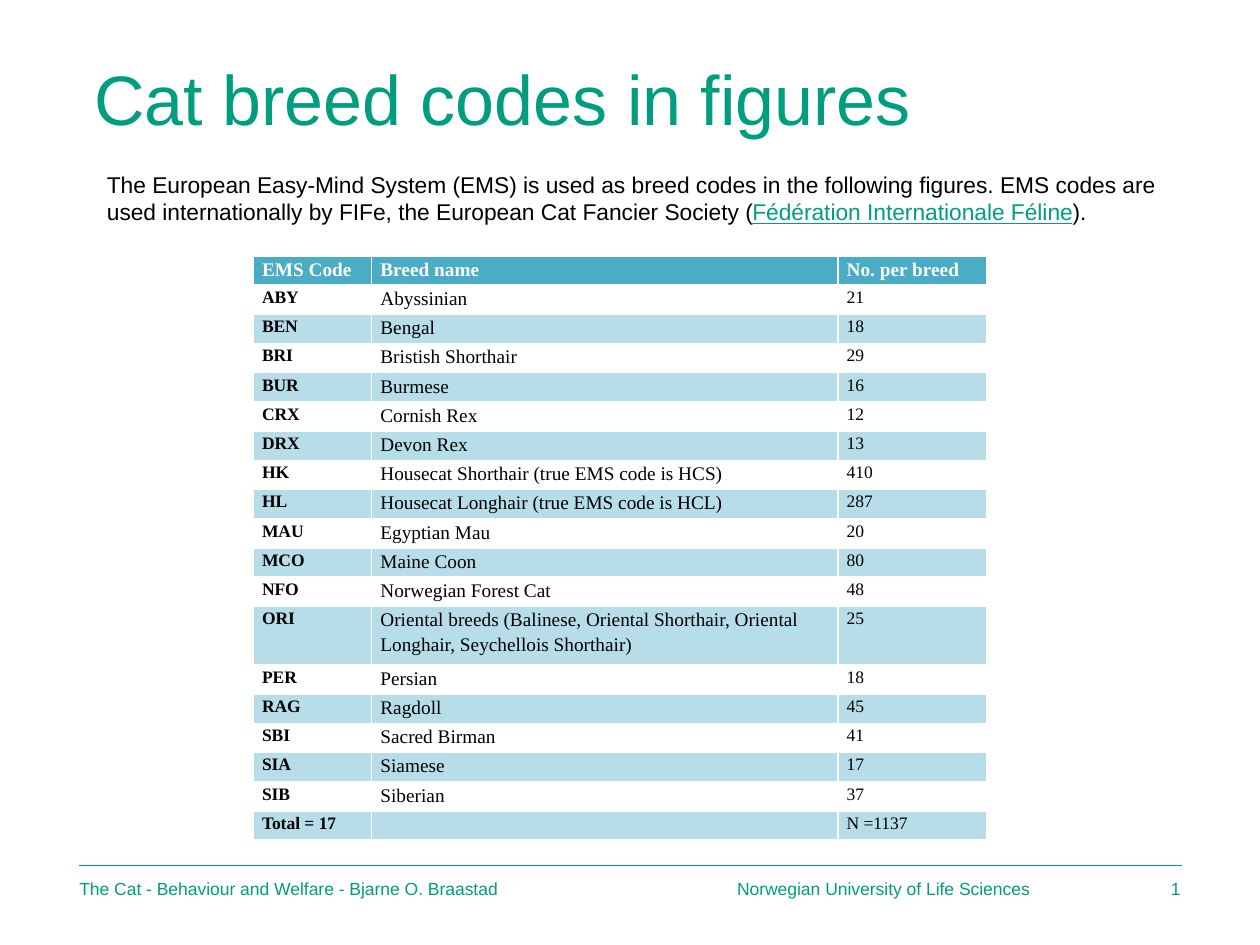
import lxml.etree
import pptx
import pptx.dml.color
import pptx.enum.shapes
import pptx.enum.text
import pptx.oxml.ns
import pptx.util

Inches = pptx.util.Inches
Pt = pptx.util.Pt
ANCHOR = pptx.enum.text.MSO_ANCHOR
ALIGN = pptx.enum.text.PP_ALIGN
GREEN, BLACK, WHITE = "009D7F", "000000", "FFFFFF"
HEADER_BLUE, BAND_BLUE = "4BACC6", "B6DDE8"


def color(hex_string):
    return pptx.dml.color.RGBColor.from_string(hex_string)


def add_text(slide, left, top, width, height, spans, size, anchor=ANCHOR.MIDDLE, inset=(0, 0)):
    """Add an Arial box of (text, colour) spans and return its paragraph."""
    box = slide.shapes.add_textbox(Inches(left), Inches(top), Inches(width), Inches(height))
    frame = box.text_frame
    frame.word_wrap = True
    frame.vertical_anchor = anchor
    frame.margin_left = frame.margin_right = Inches(inset[0])
    frame.margin_top = frame.margin_bottom = Inches(inset[1])
    para = frame.paragraphs[0]
    for text, text_color in spans:
        span = para.add_run()
        span.text = text
        span.font.name = "Arial"
        span.font.size = Pt(size)
        span.font.color.rgb = color(text_color)
    return para


deck = pptx.Presentation()
deck.slide_width, deck.slide_height = Inches(10), Inches(7.5)
page = deck.slides.add_slide(deck.slide_layouts[6])

# Footer rule
rule = page.shapes.add_connector(
    pptx.enum.shapes.MSO_CONNECTOR.STRAIGHT, Inches(0.63), Inches(6.87), Inches(9.38), Inches(6.87))
rule.line.color.rgb = color(GREEN)
rule.line.width = Pt(1)
lxml.etree.SubElement(rule._element.spPr, pptx.oxml.ns.qn("a:effectLst"))

# Title and introduction
add_text(page, 0.75, 0.44, 7.46, 0.67, [("Cat breed codes in figures", GREEN)], 40, ANCHOR.BOTTOM)
intro = add_text(page, 0.75, 1.3, 8.62, 0.54, [
    ("The European Easy-Mind System (EMS) is used as breed codes in the following figures. "
     "EMS codes are used internationally by FIFe, the European Cat Fancier Society (", BLACK),
    ("Fédération Internationale Féline", GREEN),
    (").", BLACK),
], 13, inset=(0.1, 0.05))
intro.runs[1].font.underline = True

# Breed table
breeds = [
    ("EMS Code", "Breed name", "No. per breed"),
    ("ABY", "Abyssinian", "21"),
    ("BEN", "Bengal", "18"),
    ("BRI", "Bristish Shorthair", "29"),
    ("BUR", "Burmese", "16"),
    ("CRX", "Cornish Rex", "12"),
    ("DRX", "Devon Rex", "13"),
    ("HK", "Housecat Shorthair (true EMS code is HCS)", "410"),
    ("HL", "Housecat Longhair (true EMS code is HCL)", "287"),
    ("MAU", "Egyptian Mau", "20"),
    ("MCO", "Maine Coon", "80"),
    ("NFO", "Norwegian Forest Cat", "48"),
    ("ORI", "Oriental breeds (Balinese, Oriental Shorthair, Oriental Longhair, "
            "Seychellois Shorthair)", "25"),
    ("PER", "Persian", "18"),
    ("RAG", "Ragdoll", "45"),
    ("SBI", "Sacred Birman", "41"),
    ("SIA", "Siamese", "17"),
    ("SIB", "Siberian", "37"),
    ("Total = 17", "", "N =1137"),
]
table_height = 4.64
row_height = table_height / (len(breeds) + 1)  # the ORI row is two lines tall
table = page.shapes.add_table(
    len(breeds), 3, Inches(2.01), Inches(2.03), Inches(5.83), Inches(table_height)).table
for column, width in zip(table.columns, (0.94, 3.7, 1.18)):
    column.width = Inches(width)

for row, breed in enumerate(breeds):
    is_header = row == 0
    table.rows[row].height = Inches(row_height * (2 if breed[0] == "ORI" else 1))
    for column, text in enumerate(breed):
        cell = table.cell(row, column)
        cell.margin_left = cell.margin_right = Inches(0.07)
        cell.margin_top = cell.margin_bottom = 0
        if is_header or row % 2 == 0:
            cell.fill.solid()
            cell.fill.fore_color.rgb = color(HEADER_BLUE if is_header else BAND_BLUE)
        else:
            cell.fill.background()
        para = cell.text_frame.paragraphs[0]
        para.line_spacing = 1.15
        if not text:
            # Keeps the empty cell from stretching its row
            lxml.etree.SubElement(para._p, pptx.oxml.ns.qn("a:endParaRPr"), sz="1000")
            continue
        para.text = text
        font = para.runs[0].font
        font.name = "Times New Roman"
        font.size = Pt(11 if is_header or column == 1 else 10)
        font.bold = is_header or column == 0
        font.color.rgb = color(WHITE if is_header else BLACK)

# Footer
add_text(page, 0.63, 6.97, 5.2, 0.17,
         [("The Cat - Behaviour and Welfare - Bjarne O. Braastad", GREEN)], 10)
add_text(page, 5.85, 6.97, 3.16, 0.17, [("Norwegian University of Life Sciences", GREEN)], 10)
page_number = add_text(page, 9.04, 6.97, 0.33, 0.17, [("1", GREEN)], 10)
page_number.alignment = ALIGN.RIGHT

deck.save("out.pptx")
